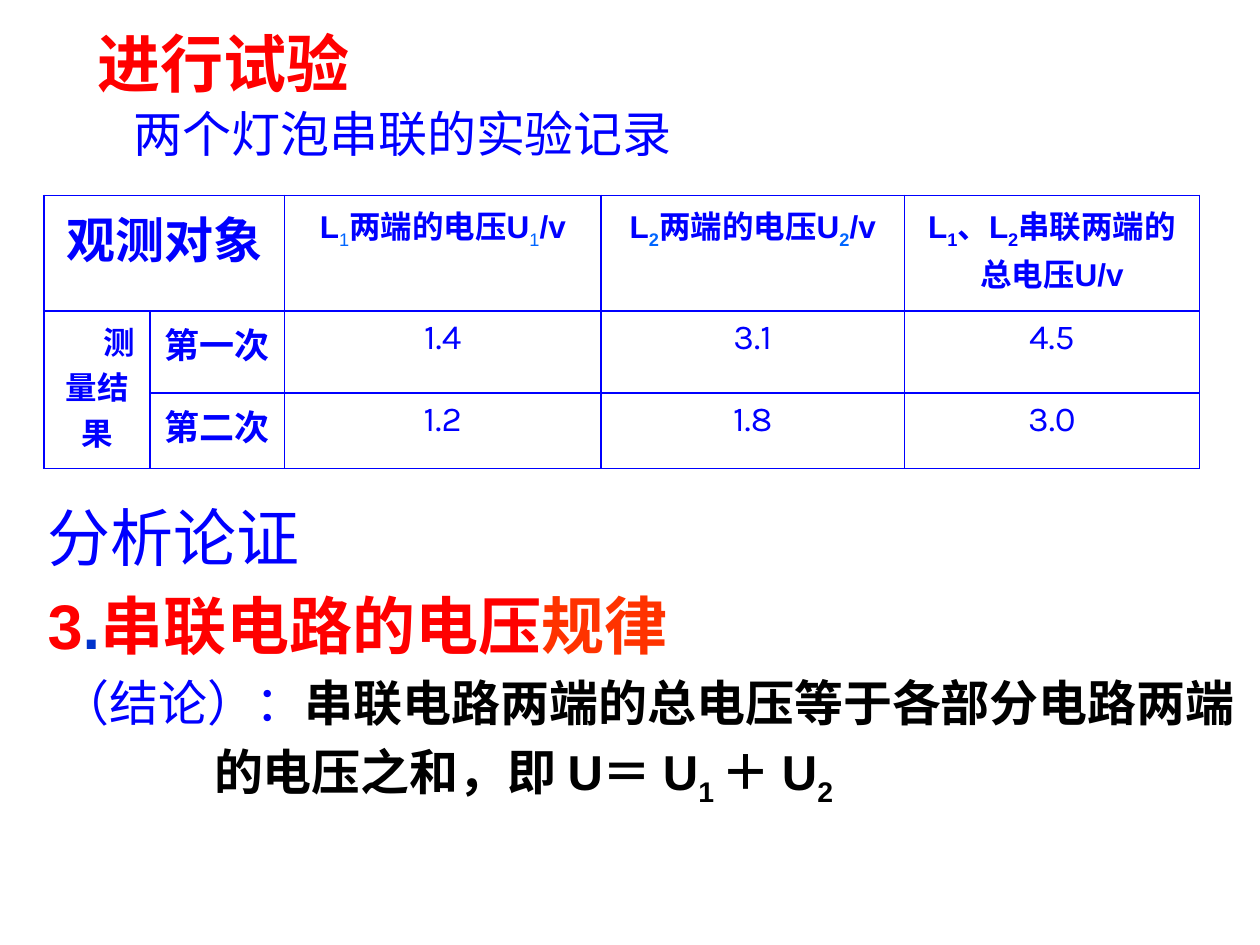
from lxml.etree import SubElement
from pptx import Presentation
from pptx.dml.color import RGBColor
from pptx.enum.text import MSO_AUTO_SIZE, PP_ALIGN
from pptx.oxml.ns import qn
from pptx.util import Inches, Pt

BLUE, SKY, NAVY = "0000FF", "0066FF", "0033CC"
RED, ORANGE, BLACK = "FF0000", "FF3300", "000000"

# A run is (text, overrides of the paragraph's format).
SUB = {"subscript": True}
SKY_SUB = {"subscript": True, "color": SKY}
THIN_SUB = {**SKY_SUB, "bold": False}

HEADING = [
    ([("进行试验", {})], {"size": 36, "color": RED, "bold": True}),
    ([("两个灯泡串联的实验记录", {})], {"size": 28, "color": BLUE, "left": 0.29}),
]
CONCLUSION = [
    ([("分析论证", {})], {"size": 36, "color": BLUE}),
    ([("3", {}), (".", {"color": NAVY}), ("串联电路的电压", {}), ("规律", {"color": ORANGE})],
     {"size": 36, "color": RED, "bold": True}),
    ([("（结论）：", {"color": BLUE, "bold": False}),
      ("串联电路两端的总电压等于各部分电路两端", {})],
     {"size": 28, "color": BLACK, "bold": True, "left": 0.1}),
    ([("的电压之和，即 U＝ U", {}), ("1 ", SUB), ("＋ U", {}), ("2", SUB)],
     {"size": 28, "color": BLACK, "bold": True, "left": 1.32}),
]

COLUMN_WIDTHS = [0.84, 1.07, 2.51, 2.41, 2.34]
ROW_HEIGHTS = [0.92, 0.65, 0.6]
COLUMN_HEADERS = [
    [("L", {}), ("1", THIN_SUB), ("两端的电压U", {}), ("1", THIN_SUB), ("/v", {})],
    [("L", {}), ("2", SKY_SUB), ("两端的电压U", {}), ("2", SKY_SUB), ("/v", {})],
    [("L", {}), ("1", SUB), ("、L", {}), ("2", SUB), ("串联两端的总电压U/v", {})],
]
MEASUREMENTS = [
    ("第一次", ["1.4", "3.1", "4.5"]),
    ("第二次", ["1.2", "1.8", "3.0"]),
]


def rgb(value):
    return RGBColor.from_string(value)


def write_paragraph(paragraph, runs, size=18, color=BLUE, bold=False, font="Arial",
                    left=0, first_line=0, align=PP_ALIGN.LEFT, line_spacing=1.0):
    """Fill a paragraph with runs; left and first_line are indents in inches."""
    paragraph.alignment = align
    paragraph.line_spacing = line_spacing
    paragraph.space_before = Pt(round(size * 0.2, 1))
    properties = paragraph._p.get_or_add_pPr()
    properties.set("marL", str(Inches(left)))
    properties.set("indent", str(Inches(first_line)))
    SubElement(properties, qn("a:buNone"))
    for text, changes in runs:
        run = paragraph.add_run()
        run.text = text
        run.font.name = font
        run.font.size = Pt(size)
        run.font.bold = changes.get("bold", bold)
        run.font.color.rgb = rgb(changes.get("color", color))
        if changes.get("subscript"):
            run._r.get_or_add_rPr().set("baseline", "-25000")


def write_text(shape, paragraphs, **shared):
    frame = shape.text_frame
    frame.word_wrap = True
    frame.auto_size = MSO_AUTO_SIZE.NONE
    for index, (runs, style) in enumerate(paragraphs):
        paragraph = frame.add_paragraph() if index else frame.paragraphs[0]
        write_paragraph(paragraph, runs, **style, **shared)


def style_cell(cell, left_width):
    """Clear the fill and draw the four borders."""
    properties = cell._tc.get_or_add_tcPr()
    for side, width in (("L", left_width), ("R", 1), ("T", 1), ("B", 1)):
        line = SubElement(properties, qn(f"a:ln{side}"), w=str(Pt(width)))
        fill = SubElement(line, qn("a:solidFill"))
        SubElement(fill, qn("a:srgbClr"), val=BLUE)
    cell.fill.background()


def write_cell(cell, runs, **style):
    write_paragraph(cell.text_frame.paragraphs[0], runs, align=PP_ALIGN.CENTER, **style)


def add_record_table(slide):
    table = slide.shapes.add_table(
        len(ROW_HEIGHTS), len(COLUMN_WIDTHS), Inches(0.35), Inches(1.55),
        Inches(sum(COLUMN_WIDTHS)), Inches(sum(ROW_HEIGHTS))).table
    table.first_row = table.horz_banding = False
    for column, width in zip(table.columns, COLUMN_WIDTHS):
        column.width = Inches(width)
    for row, height in zip(table.rows, ROW_HEIGHTS):
        row.height = Inches(height)
        for index, cell in enumerate(row.cells):
            style_cell(cell, 1 if index else 1.5)
    table.cell(0, 0).merge(table.cell(0, 1))
    table.cell(1, 0).merge(table.cell(2, 0))

    write_cell(table.cell(0, 0), [("观测对象", {})], size=28, bold=True)
    write_cell(table.cell(1, 0), [("测量结果", {})], bold=True, first_line=0.35)
    for column, runs in enumerate(COLUMN_HEADERS, start=2):
        write_cell(table.cell(0, column), runs, bold=True)
    for row, (label, values) in enumerate(MEASUREMENTS, start=1):
        write_cell(table.cell(row, 1), [(label, {})], size=20, bold=True)
        for column, value in enumerate(values, start=2):
            write_cell(table.cell(row, column), [(value, {})], size=20, font="Karla")


def main():
    presentation = Presentation()
    presentation.slide_width, presentation.slide_height = Inches(10), Inches(7.5)
    slide = presentation.slides.add_slide(presentation.slide_layouts[1])
    title = slide.shapes.title
    title._element.getparent().remove(title._element)

    body = slide.placeholders[1]
    body.left, body.top = Inches(0.67), Inches(0.21)
    body.width, body.height = Inches(8.75), Inches(1.33)
    write_text(body, HEADING, font="Calibri", line_spacing=0.9)

    add_record_table(slide)

    conclusion = slide.shapes.add_textbox(
        Inches(0.28), Inches(3.91), Inches(9.72), Inches(2.56))
    write_text(conclusion, CONCLUSION)
    presentation.save("out.pptx")


if __name__ == "__main__":
    main()
